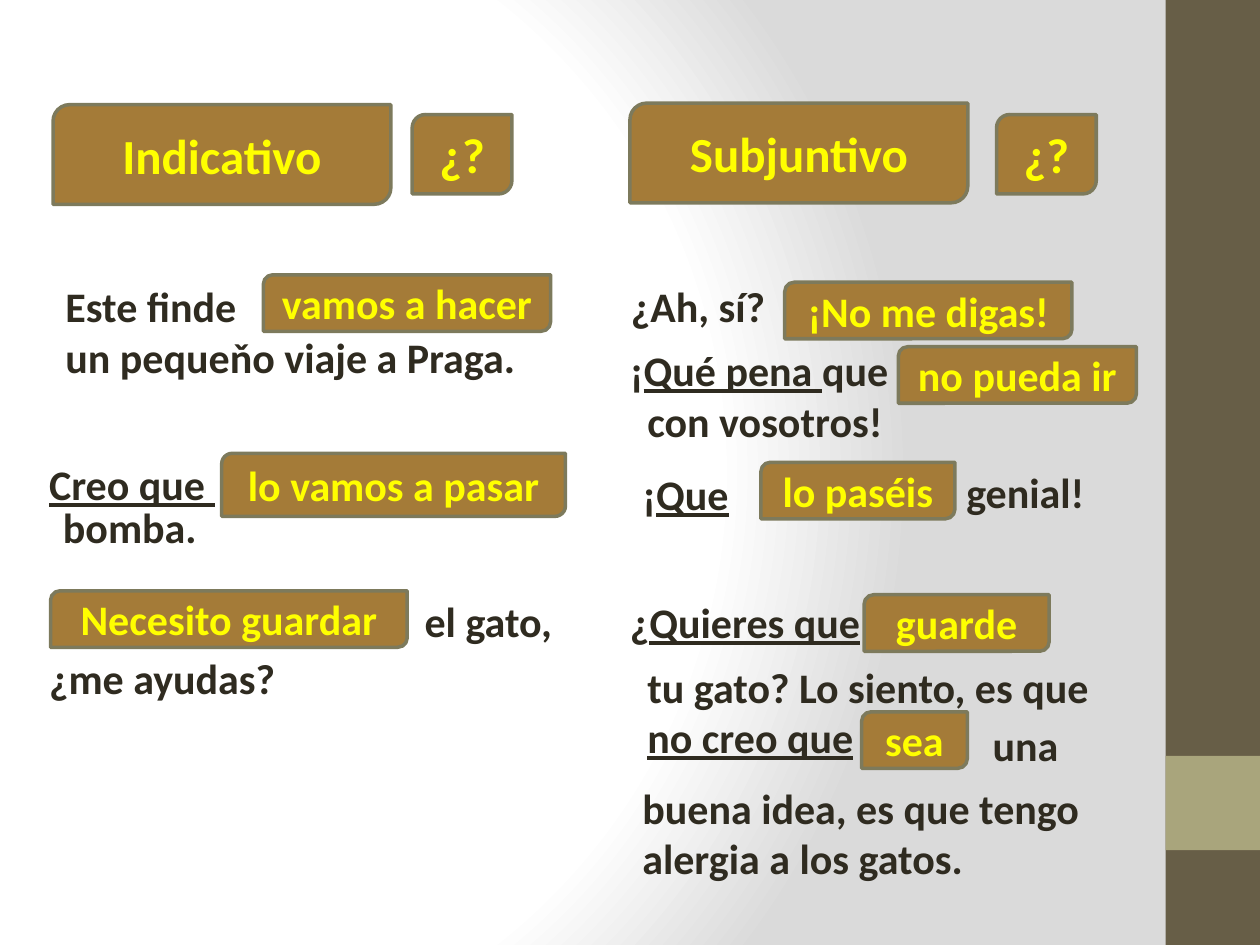
from pptx import Presentation
from pptx.dml.color import RGBColor
from pptx.enum.shapes import MSO_SHAPE
from pptx.enum.text import MSO_ANCHOR, MSO_AUTO_SIZE, PP_ALIGN
from pptx.oxml import parse_xml
from pptx.oxml.ns import nsdecls, qn
from pptx.util import Cm, Pt

COLORS = {
    "white": "FFFFFF",
    "shade": "DADADA",
    "band": "675E47",
    "band_accent": "A9A57C",
    "answer": "A47B38",
    "answer_line": "7D7A5C",
    "answer_text": "FFFF00",
    "text": "2F2B20",
}


class Worksheet:
    font = "Calibri"
    text_size = 24
    heading_size = 28
    line_height = 1.03
    padding = 0.24

    def __init__(self, page):
        self.page = page

    def color(self, name):
        return RGBColor.from_string(COLORS[name])

    def background(self):
        """Circular gradient centred left of the middle of the page."""
        self.page.background.fill.solid()
        stops = "".join(
            f'<a:gs pos="{position * 1000}"><a:srgbClr val="{COLORS[name]}"/></a:gs>'
            for position, name in ((0, "white"), (75, "white"), (100, "shade"))
        )
        gradient = parse_xml(
            f'<a:gradFill {nsdecls("a")} rotWithShape="1"><a:gsLst>{stops}</a:gsLst>'
            '<a:path path="circle">'
            '<a:fillToRect l="20000" t="50000" r="100000" b="50000"/>'
            "</a:path></a:gradFill>"
        )
        properties = self.page.element.find(".//" + qn("p:bgPr"))
        properties.replace(properties.find(qn("a:solidFill")), gradient)

    def shape(self, kind, left, top, width, height, fill):
        shape = self.page.shapes.add_shape(
            kind, Cm(left), Cm(top), Cm(width), Cm(height)
        )
        shape.shadow.inherit = False
        shape.fill.solid()
        shape.fill.fore_color.rgb = self.color(fill)
        return shape

    def band(self, top, height, fill):
        shape = self.shape(MSO_SHAPE.RECTANGLE, 23.5, top, 1.9, height, fill)
        shape.line.fill.background()

    def add_span(self, para, text, size, color, underline=False):
        span = para.add_run()
        span.text = text
        font = span.font
        font.name, font.size, font.bold = self.font, Pt(size), True
        font.color.rgb = self.color(color)
        if underline:
            font.underline = True

    def answer(self, left, top, width, text, height=1.14, size=text_size):
        shape = self.shape(
            MSO_SHAPE.ROUND_2_DIAG_RECTANGLE, left, top, width, height, "answer"
        )
        shape.line.color.rgb = self.color("answer_line")
        shape.line.width = Pt(2)
        frame = shape.text_frame
        frame.word_wrap = True
        frame.vertical_anchor = MSO_ANCHOR.MIDDLE
        para = frame.paragraphs[0]
        para.alignment = PP_ALIGN.CENTER
        self.add_span(para, text, size, "answer_text")

    def heading(self, left, top, text):
        self.answer(left, top, 6.81, text, 2.01, self.heading_size)

    def question(self, left):
        self.answer(left, 2.31, 2.01, "¿?", 1.6, self.heading_size)

    def sentence(self, left, top, width, *lines):
        """Text lines; the parts between underscores are underlined."""
        height = self.padding + self.line_height * len(lines)
        box = self.page.shapes.add_textbox(Cm(left), Cm(top), Cm(width), Cm(height))
        frame = box.text_frame
        frame.word_wrap = False
        frame.auto_size = MSO_AUTO_SIZE.SHAPE_TO_FIT_TEXT
        for number, line in enumerate(lines):
            para = frame.add_paragraph() if number else frame.paragraphs[0]
            for index, part in enumerate(line.split("_")):
                if part:
                    self.add_span(para, part, self.text_size, "text", index % 2 == 1)


def main():
    deck = Presentation()
    deck.slide_width, deck.slide_height = Cm(25.4), Cm(19.05)
    sheet = Worksheet(deck.slides.add_slide(deck.slide_layouts[6]))

    # Background and side band
    sheet.background()
    sheet.band(0, 19.05, "band")
    sheet.band(15.24, 1.9, "band_accent")

    # Column headings
    sheet.heading(1.07, 2.11, "Indicativo")
    sheet.heading(12.7, 2.08, "Subjuntivo")
    sheet.question(8.31)
    sheet.question(20.09)

    # Indicative: the trip
    sheet.sentence(1.07, 5.54, 9.68, "Este finde", "un pequeňo viaje a Praga.")
    sheet.answer(5.31, 5.54, 5.79, "vamos a hacer")

    # Subjunctive: the reply
    sheet.sentence(12.47, 5.54, 3.43, "¿Ah, sí?")
    sheet.answer(15.82, 5.69, 5.79, "¡No me digas!")
    sheet.sentence(12.45, 6.83, 5.77, "¡_Qué pena _que")
    sheet.answer(18.11, 6.99, 4.8, "no pueda ir")
    sheet.sentence(12.8, 7.85, 5.31, "con vosotros!")

    # Indicative: the opinion
    sheet.sentence(0.74, 9.12, 3.89, "_Creo que _")
    sheet.answer(4.47, 9.14, 6.93, "lo vamos a pasar", height=1.27)
    sheet.sentence(1.02, 9.98, 3.23, "bomba.")

    # Subjunctive: the wish
    sheet.sentence(12.7, 9.32, 2.46, "¡_Que_ ")
    sheet.answer(15.34, 9.32, 3.91, "lo paséis")
    sheet.sentence(19.23, 9.27, 2.92, "genial!")

    # Indicative: the cat
    sheet.answer(1.02, 11.91, 7.19, "Necesito guardar")
    sheet.sentence(8.31, 11.89, 3.1, "el gato,")
    sheet.sentence(0.74, 13.03, 5.31, "¿me ayudas?")

    # Subjunctive: the refusal
    sheet.sentence(12.45, 11.91, 5.38, "¿_Quieres que_")
    sheet.answer(17.42, 11.99, 3.73, "guarde")
    sheet.sentence(12.8, 13.21, 9.53, "tu gato? Lo siento, es que", "_no creo que_ ")
    sheet.answer(17.37, 14.35, 2.13, "sea")
    sheet.sentence(19.76, 14.38, 1.85, "una")
    sheet.sentence(12.7, 15.65, 9.42, "buena idea, es que tengo", "alergia a los gatos.")

    deck.save("out.pptx")


if __name__ == "__main__":
    main()
